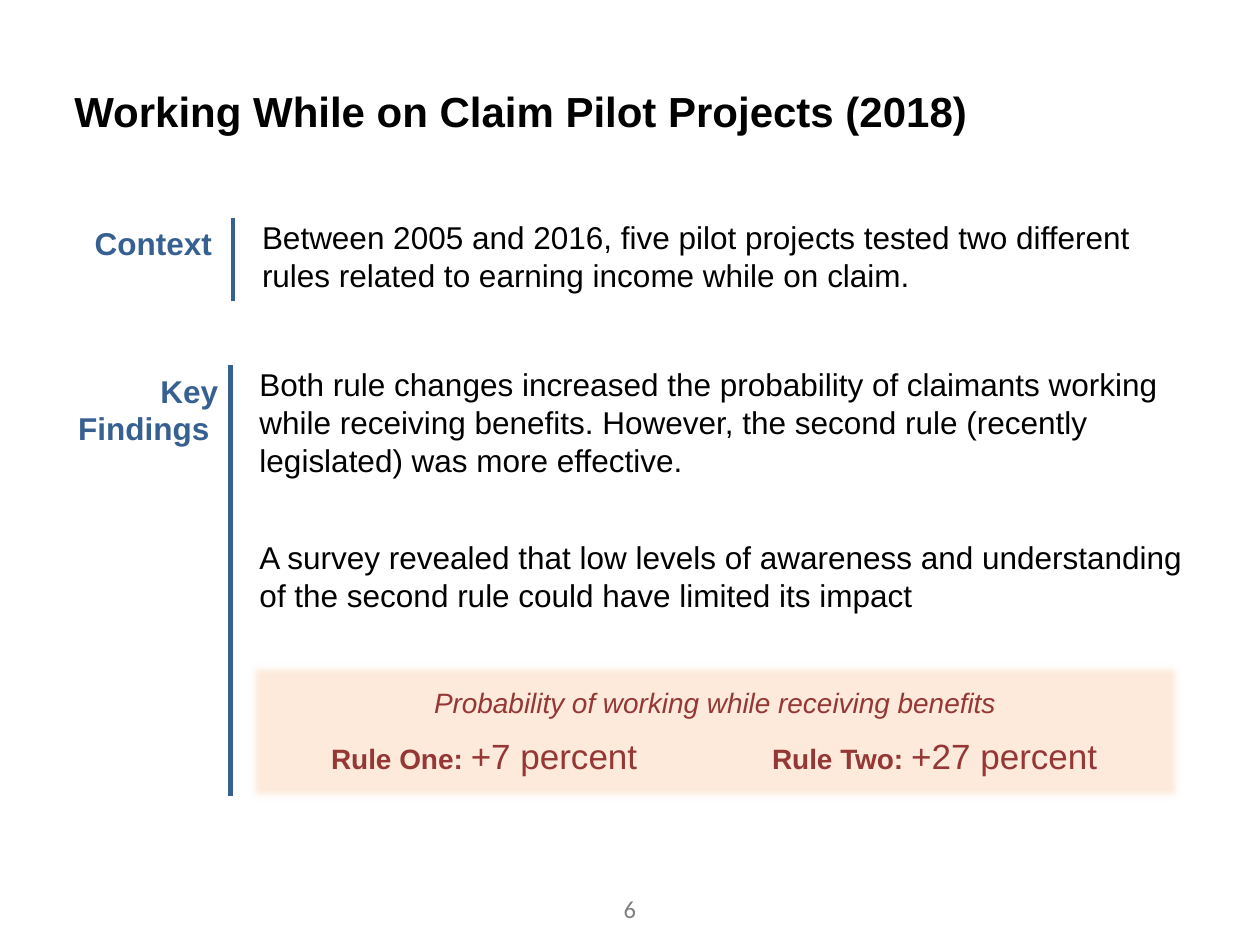
import pptx
import pptx.util
from lxml import etree
from pptx.dml.color import RGBColor
from pptx.enum.shapes import MSO_CONNECTOR, MSO_SHAPE
from pptx.enum.text import MSO_ANCHOR, PP_ALIGN
from pptx.oxml.ns import qn
from pptx.util import Inches, Pt

TITLE = "Working While on Claim Pilot Projects (2018)"
PAGE_NUMBER = "6"
BLACK, BLUE, PEACH, RED, GREY = "000000", "376092", "FDEADA", "953735", "808080"

# Label and its height; x of the rule, top and bottom of the section; paragraphs
SECTIONS = [
    ("Context ", 0.4, 1.85, 1.73, 2.39, [
        "Between 2005 and 2016, five pilot projects tested two different rules "
        "related to earning income while on claim.",
    ]),
    ("Key\vFindings ", 0.71, 1.83, 2.9, 6.32, [
        "Both rule changes increased the probability of claimants working while "
        "receiving benefits. However, the second rule (recently legislated) was "
        "more effective.",
        "A survey revealed that low levels of awareness and understanding of the "
        "second rule could have limited its impact",
    ]),
]
CALLOUT_HEADING = "Probability of working while receiving benefits"
RESULTS = [("Rule One: ", "+7 percent"), ("Rule Two: ", "+27 percent")]
RESULT_TABS = (0.57, 4.07)
LABEL_LEFT, BODY_RIGHT = 0.21, 9.49


def rgb(hex_colour):
    return RGBColor.from_string(hex_colour)


def style(run, size, colour, bold=False, italic=False, face="Arial"):
    font = run.font
    font.name, font.size, font.bold, font.italic = face, Pt(size), bold, italic
    font.color.rgb = rgb(colour)


def set_frame(frame, anchor=MSO_ANCHOR.TOP, insets=(0.1, 0.05, 0.1, 0.05)):
    frame.word_wrap = True
    frame.vertical_anchor = anchor
    (frame.margin_left, frame.margin_top,
     frame.margin_right, frame.margin_bottom) = map(Inches, insets)


def add_text(slide, box, paragraphs, size, colour, align=PP_ALIGN.LEFT,
             bold=False, face="Arial", gap=0, **frame_options):
    frame = slide.shapes.add_textbox(*map(Inches, box)).text_frame
    set_frame(frame, **frame_options)
    for index, text in enumerate(paragraphs):
        paragraph = frame.add_paragraph() if index else frame.paragraphs[0]
        paragraph.text = text
        paragraph.alignment = align
        if index:
            paragraph.space_before = Pt(gap)
        for run in paragraph.runs:
            style(run, size, colour, bold, face=face)


def add_section(slide, label, label_height, rule_x, top, bottom, paragraphs):
    """Right-aligned label, vertical rule and body text."""
    add_text(slide, (LABEL_LEFT, top, rule_x - LABEL_LEFT, label_height), [label],
             18, BLUE, PP_ALIGN.RIGHT, bold=True)
    add_text(slide, (rule_x, top, BODY_RIGHT - rule_x, 0.66 if len(paragraphs) == 1 else 2.04),
             paragraphs, 18, BLACK, gap=34, insets=(0.23, 0, 0.1, 0.05))
    rule = slide.shapes.add_connector(
        MSO_CONNECTOR.STRAIGHT, *map(Inches, (rule_x, bottom, rule_x, top)))
    rule.line.color.rgb = rgb(BLUE)
    rule.line.width = Pt(2.5)
    etree.SubElement(rule._element.spPr, qn("a:effectLst"))


def add_callout(slide):
    callout = slide.shapes.add_shape(
        MSO_SHAPE.RECTANGLE, *map(Inches, (1.96, 5.24, 7.43, 1.13)))
    callout.fill.solid()
    callout.fill.fore_color.rgb = rgb(PEACH)
    callout.line.fill.background()
    callout.shadow.inherit = False
    effects = callout._element.spPr.find(qn("a:effectLst"))
    etree.SubElement(effects, qn("a:softEdge"), rad=str(Pt(5)))

    frame = callout.text_frame
    set_frame(frame, insets=(0.1, 0.2, 0.1, 0.2))
    heading = frame.paragraphs[0]
    heading.text = CALLOUT_HEADING
    heading.alignment = PP_ALIGN.CENTER
    heading.space_after = Pt(9)
    style(heading.runs[0], 16, RED, italic=True)

    results = frame.add_paragraph()
    results.alignment = PP_ALIGN.LEFT
    tabs = etree.SubElement(results._p.get_or_add_pPr(), qn("a:tabLst"))
    for position, (rule_name, change) in zip(RESULT_TABS, RESULTS):
        etree.SubElement(tabs, qn("a:tab"), pos=str(Inches(position)), algn="l")
        for text, size, bold in (("\t" + rule_name, 16, True), (change, 20, False)):
            run = results.add_run()
            run.text = text
            style(run, size, RED, bold)


def main():
    deck = pptx.Presentation()
    deck.slide_width, deck.slide_height = Inches(10), Inches(7.5)
    slide = deck.slides.add_slide(deck.slide_layouts.get_by_name("Title Only"))

    title = slide.shapes.title
    title.left, title.top, title.width, title.height = map(Inches, (0.49, 0.31, 9, 0.73))
    title.text_frame.text = TITLE
    set_frame(title.text_frame, MSO_ANCHOR.MIDDLE, (0.1, 0.46, 0.1, 0.05))
    title.text_frame.paragraphs[0].alignment = PP_ALIGN.LEFT
    style(title.text_frame.paragraphs[0].runs[0], 24, BLACK, bold=True)

    for section in SECTIONS:
        add_section(slide, *section)
    add_callout(slide)
    add_text(slide, (0, 7.05, 10, 0.34), [PAGE_NUMBER], 14, GREY,
             PP_ALIGN.CENTER, face="Calibri")
    deck.save("out.pptx")


if __name__ == "__main__":
    main()
